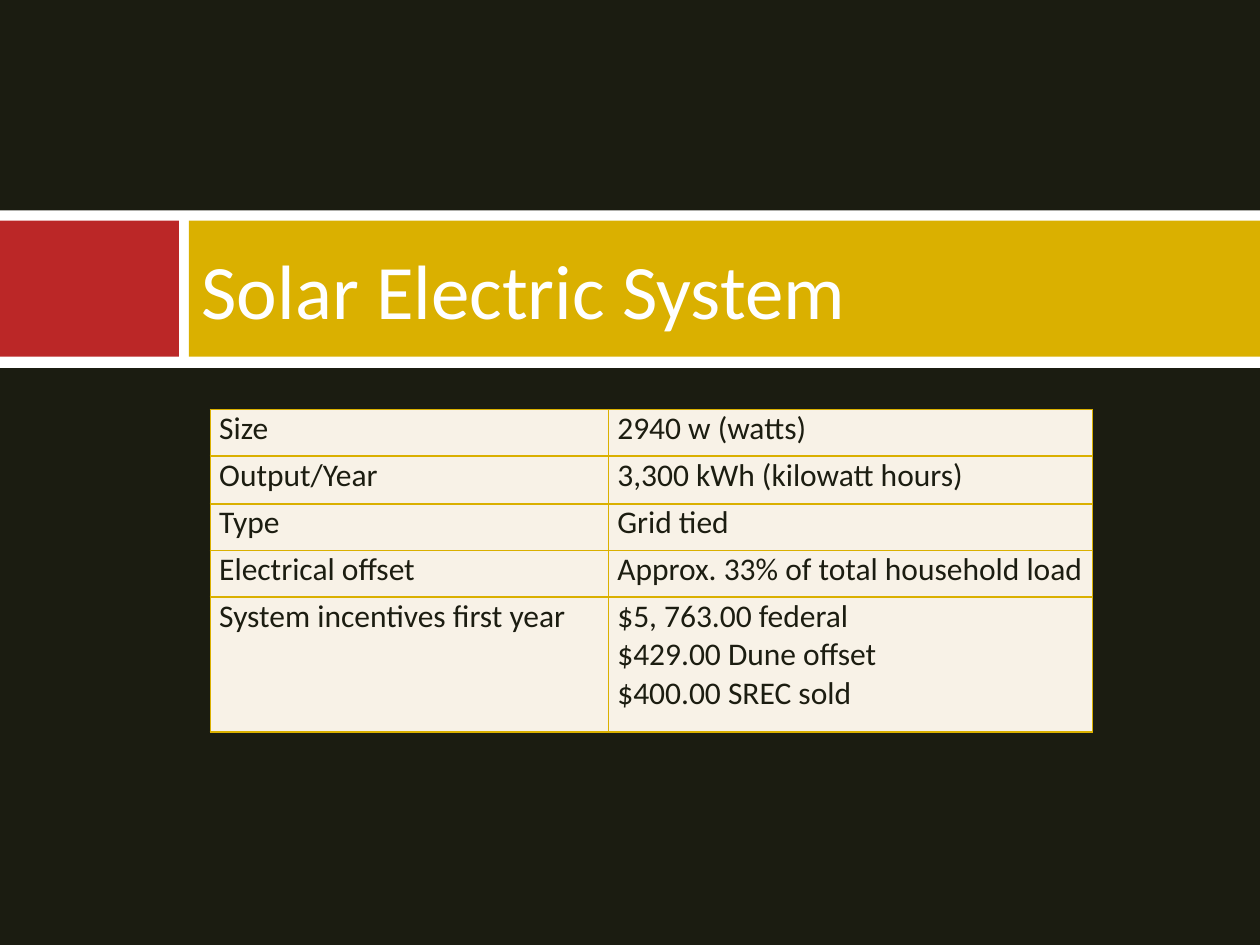
from lxml import etree
from pptx import Presentation
from pptx.dml.color import RGBColor
from pptx.enum.shapes import MSO_SHAPE
from pptx.enum.text import MSO_ANCHOR, PP_ALIGN
from pptx.oxml.ns import qn
from pptx.util import Inches, Pt

RECTANGLE = MSO_SHAPE.RECTANGLE
MIDDLE, TOP = MSO_ANCHOR.MIDDLE, MSO_ANCHOR.TOP
LEFT = PP_ALIGN.LEFT
TITLE_ONLY = 5

DARK, WHITE, RED, GOLD = "1B1C11", "FFFFFF", "BB2727", "DAB000"
CELL_FILL, CELL_TEXT = "F8F2E7", "1C1D11"

FACTS = [
    ("Size", "2940 w (watts)"),
    ("Output/Year", "3,300 kWh (kilowatt hours)"),
    ("Type", "Grid tied"),
    ("Electrical offset", "Approx. 33% of total household load"),
    ("System incentives first year",
     "$5, 763.00 federal\n$429.00 Dune offset\n$400.00 SREC sold"),
]
COLUMN_WIDTHS = [3.16, 3.84]
ROW_HEIGHTS = [0.37, 0.38, 0.37, 0.37, 1.07]


def color(hex_string):
    return RGBColor.from_string(hex_string)


def write_text(frame, text, *, size, text_color, font="Calibri", align=LEFT):
    """Fill a text frame, one paragraph per line of text."""
    frame.text = text
    for paragraph in frame.paragraphs:
        paragraph.alignment = align
        paragraph.font.size = Pt(size)
        paragraph.font.name = font
        paragraph.font.color.rgb = color(text_color)


def set_cell_borders(cell, hex_string, width):
    properties = cell._tc.get_or_add_tcPr()
    for side in ("a:lnL", "a:lnR", "a:lnT", "a:lnB"):
        line = etree.SubElement(properties, qn(side), w=str(Pt(width)))
        fill = etree.SubElement(line, qn("a:solidFill"))
        etree.SubElement(fill, qn("a:srgbClr"), val=hex_string)


class SlideBuilder:
    """Holds the style and the current slide."""

    title_size = 44
    cell_size = 18

    def __init__(self, presentation):
        self.slide = presentation.slides.add_slide(
            presentation.slide_layouts[TITLE_ONLY])
        background = self.slide.background.fill
        background.solid()
        background.fore_color.rgb = color(DARK)

    def band(self, left, top, width, height, fill):
        shape = self.slide.shapes.add_shape(
            RECTANGLE, Inches(left), Inches(top), Inches(width), Inches(height))
        shape.shadow.inherit = False
        shape.fill.solid()
        shape.fill.fore_color.rgb = color(fill)
        shape.line.fill.background()

    def title(self, text, left, top, width, height):
        """Place the title in front of everything drawn so far."""
        title = self.slide.shapes.title
        title.left, title.top = Inches(left), Inches(top)
        title.width, title.height = Inches(width), Inches(height)
        title.text_frame.vertical_anchor = MIDDLE
        write_text(title.text_frame, text, size=self.title_size, text_color=WHITE)
        self.slide.shapes.element.append(title.element)

    def table(self, rows, left, top, widths, heights):
        table = self.slide.shapes.add_table(
            len(rows), len(widths), Inches(left), Inches(top),
            Inches(sum(widths)), Inches(sum(heights))).table
        table.first_row = table.horz_banding = False
        for column, width in zip(table.columns, widths):
            column.width = Inches(width)
        for row, height, texts in zip(table.rows, heights, rows):
            row.height = Inches(height)
            for cell, text in zip(row.cells, texts):
                self.cell(cell, text)

    def cell(self, cell, text):
        cell.margin_left = cell.margin_right = Inches(0.07)
        cell.margin_top = cell.margin_bottom = 0
        cell.vertical_anchor = TOP
        set_cell_borders(cell, GOLD, 1)
        cell.fill.solid()
        cell.fill.fore_color.rgb = color(CELL_FILL)
        write_text(cell.text_frame, text, size=self.cell_size, text_color=CELL_TEXT)


def main():
    presentation = Presentation()
    presentation.slide_width, presentation.slide_height = Inches(10), Inches(7.5)
    builder = SlideBuilder(presentation)
    builder.band(0, 1.67, 10, 1.25, WHITE)
    builder.band(0, 1.75, 1.42, 1.08, RED)
    builder.band(1.5, 1.75, 8.5, 1.08, GOLD)
    builder.title("Solar Electric System", 1.5, 1.75, 8.33, 1.08)
    builder.table(FACTS, 1.67, 3.25, COLUMN_WIDTHS, ROW_HEIGHTS)
    presentation.save("out.pptx")


if __name__ == "__main__":
    main()
